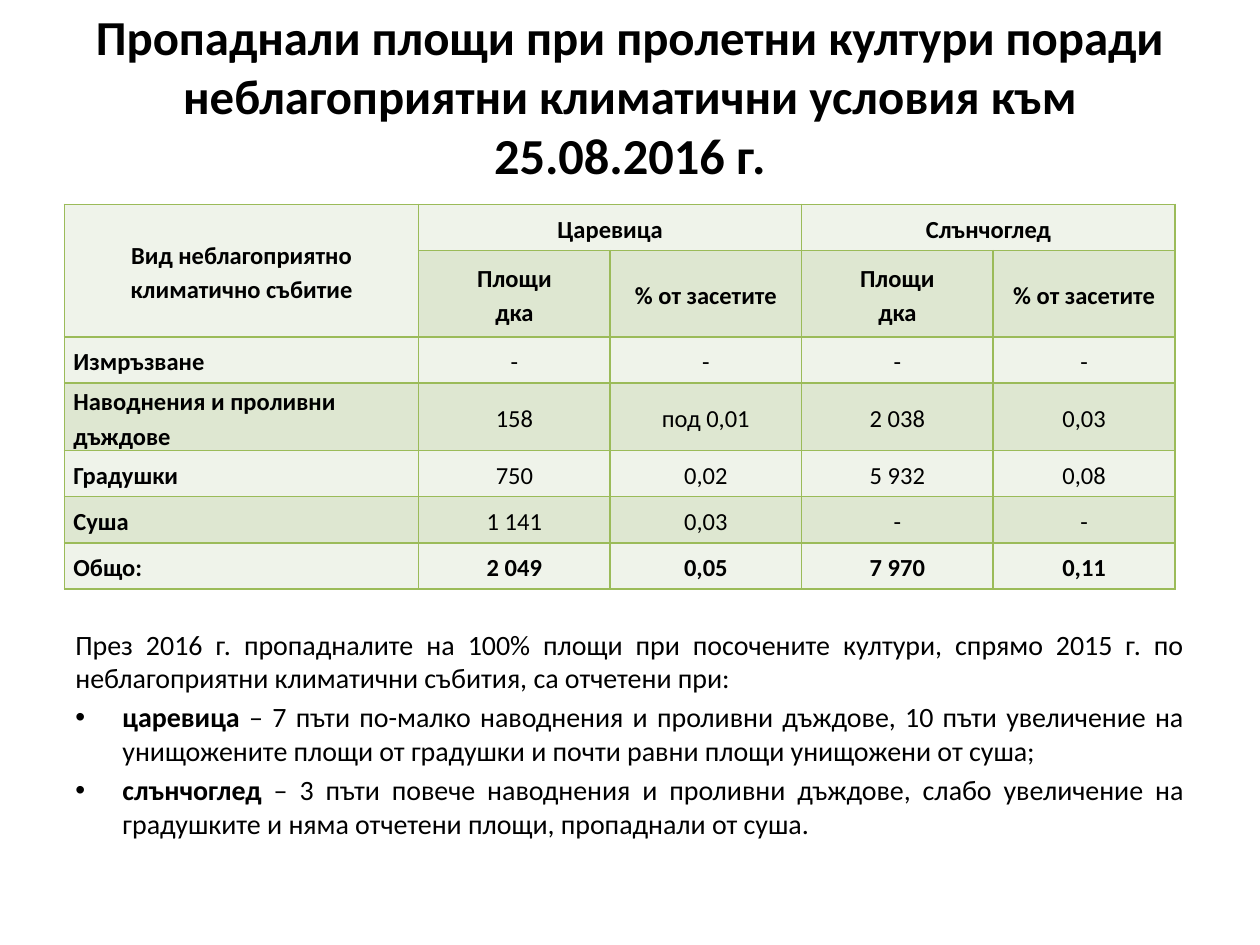
import pptx
import pptx.dml.color
import pptx.enum.text
import pptx.oxml
import pptx.oxml.ns
import pptx.util
from pptx.util import Cm, Pt

RGBColor = pptx.dml.color.RGBColor
ALIGN = pptx.enum.text.PP_ALIGN
MIDDLE = pptx.enum.text.MSO_ANCHOR.MIDDLE

BLACK = RGBColor(0x00, 0x00, 0x00)
PALE = RGBColor(0xEF, 0xF3, 0xEA)
SAGE = RGBColor(0xDE, 0xE7, 0xD1)
GREEN = RGBColor(0x9B, 0xBB, 0x59)
FONT = "Calibri"

# Runs are (text, size, bold)
TITLE = [
    ("Пропаднали площи при пролетни култури поради неблагоприятни климатични условия към ", 27.9, True),
    ("25.08.2016 г.", 28.8, True),
]
INTRO = [
    ("През 2016 г. пропадналите на 100% площи при посочените култури, спрямо 2015 г. "
     "по неблагоприятни климатични събития, са отчетени при:", 16, False),
]
BULLETS = [
    [("царевица ", 16, True),
     ("– 7 пъти по-малко наводнения и проливни дъждове, 10 пъти увеличение на "
      "унищожените площи от градушки и почти равни площи унищожени от суша;", 16, False)],
    [("слънчоглед", 16, True),
     (" – 3 пъти повече наводнения и проливни дъждове, слабо увеличение на "
      "градушките и няма отчетени площи, пропаднали от суша.", 16, False)],
]
ROWS = [
    ["Вид неблагоприятно климатично събитие", "Царевица", None, "Слънчоглед", None],
    [None] + ["Площи\nдка", "% от засетите"] * 2,
    ["Измръзване", "-", "-", "-", "-"],
    ["Наводнения и проливни дъждове", "158", "под 0,01", "2 038", "0,03"],
    ["Градушки", "750", "0,02", "5 932", "0,08"],
    ["Суша", "1 141", "0,03", "-", "-"],
    ["Общо:", "2 049", "0,05", "7 970", "0,11"],
]
HEADER_ROWS = 2
MERGES = [((0, 0), (1, 0)), ((0, 1), (0, 2)), ((0, 3), (0, 4))]
COLUMN_WIDTHS = [7.14, 3.86, 3.86, 3.86, 3.67]
ROW_HEIGHTS = [0.93, 1.74, 0.93, 1.36, 0.93, 0.93, 0.93]


def add_runs(para, runs):
    for text, size, bold in runs:
        span = para.add_run()
        span.text = text
        font = span.font
        font.name, font.size, font.bold = FONT, Pt(size), bold
        font.color.rgb = BLACK


def add_text_box(page, left, top, width, height):
    frame = page.shapes.add_textbox(Cm(left), Cm(top), Cm(width), Cm(height)).text_frame
    frame.word_wrap = True
    return frame


def add_bullet(para):
    properties = para._p.get_or_add_pPr()
    properties.set("marL", str(Cm(0.95)))
    properties.set("indent", str(Cm(-0.95)))
    for tag, name, value in (("buFont", "typeface", "Arial"), ("buChar", "char", "•")):
        bullet = pptx.oxml.parse_xml(
            f'<a:{tag} {pptx.oxml.ns.nsdecls("a")} {name}="{value}"/>')
        properties.append(bullet)


def add_borders(cell):
    """Put the four border lines ahead of the fill, as the schema asks."""
    properties = cell._tc.get_or_add_tcPr()
    for position, side in enumerate(("lnL", "lnR", "lnT", "lnB")):
        properties.insert(position, pptx.oxml.parse_xml(
            f'<a:{side} {pptx.oxml.ns.nsdecls("a")} w="{Pt(1)}">'
            f'<a:solidFill><a:srgbClr val="{GREEN}"/></a:solidFill></a:{side}>'))


def fill_cell(cell, text, row, column):
    is_label = column == 0 and row >= HEADER_ROWS
    bold = is_label or row < HEADER_ROWS or row == len(ROWS) - 1
    cell.vertical_anchor = MIDDLE
    cell.margin_left = cell.margin_right = Cm(0.18)
    cell.margin_top = cell.margin_bottom = 0
    cell.fill.solid()
    cell.fill.fore_color.rgb = SAGE if row % 2 else PALE
    add_borders(cell)
    if text is None:
        return
    for index, line in enumerate(text.split("\n")):
        frame = cell.text_frame
        para = frame.add_paragraph() if index else frame.paragraphs[0]
        para.alignment = ALIGN.LEFT if is_label else ALIGN.CENTER
        para.line_spacing = 1.15
        add_runs(para, [(line, 14, bold)])


def add_loss_table(page):
    table = page.shapes.add_table(
        len(ROWS), len(COLUMN_WIDTHS), Cm(1.3), Cm(4.12),
        Cm(sum(COLUMN_WIDTHS)), Cm(sum(ROW_HEIGHTS))).table
    for column, width in zip(table.columns, COLUMN_WIDTHS):
        column.width = Cm(width)
    for row, height in zip(table.rows, ROW_HEIGHTS):
        row.height = Cm(height)
    for first, last in MERGES:
        table.cell(*first).merge(table.cell(*last))
    for row, texts in enumerate(ROWS):
        for column, text in enumerate(texts):
            fill_cell(table.cell(row, column), text, row, column)


def main():
    deck = pptx.Presentation()
    deck.slide_width, deck.slide_height = Cm(25.4), Cm(19.05)
    page = deck.slides.add_slide(deck.slide_layouts[6])

    title = add_text_box(page, 1.27, 0.53, 22.86, 2.8)
    title.vertical_anchor = MIDDLE
    title.paragraphs[0].alignment = ALIGN.CENTER
    add_runs(title.paragraphs[0], TITLE)

    add_loss_table(page)

    summary = add_text_box(page, 1.27, 12.52, 22.86, 6.2)
    for index, runs in enumerate([INTRO] + BULLETS):
        para = summary.add_paragraph() if index else summary.paragraphs[0]
        para.alignment = ALIGN.JUSTIFY
        para.space_before = Pt(3.2)
        if index:
            add_bullet(para)
        add_runs(para, runs)

    deck.save("out.pptx")


if __name__ == "__main__":
    main()
